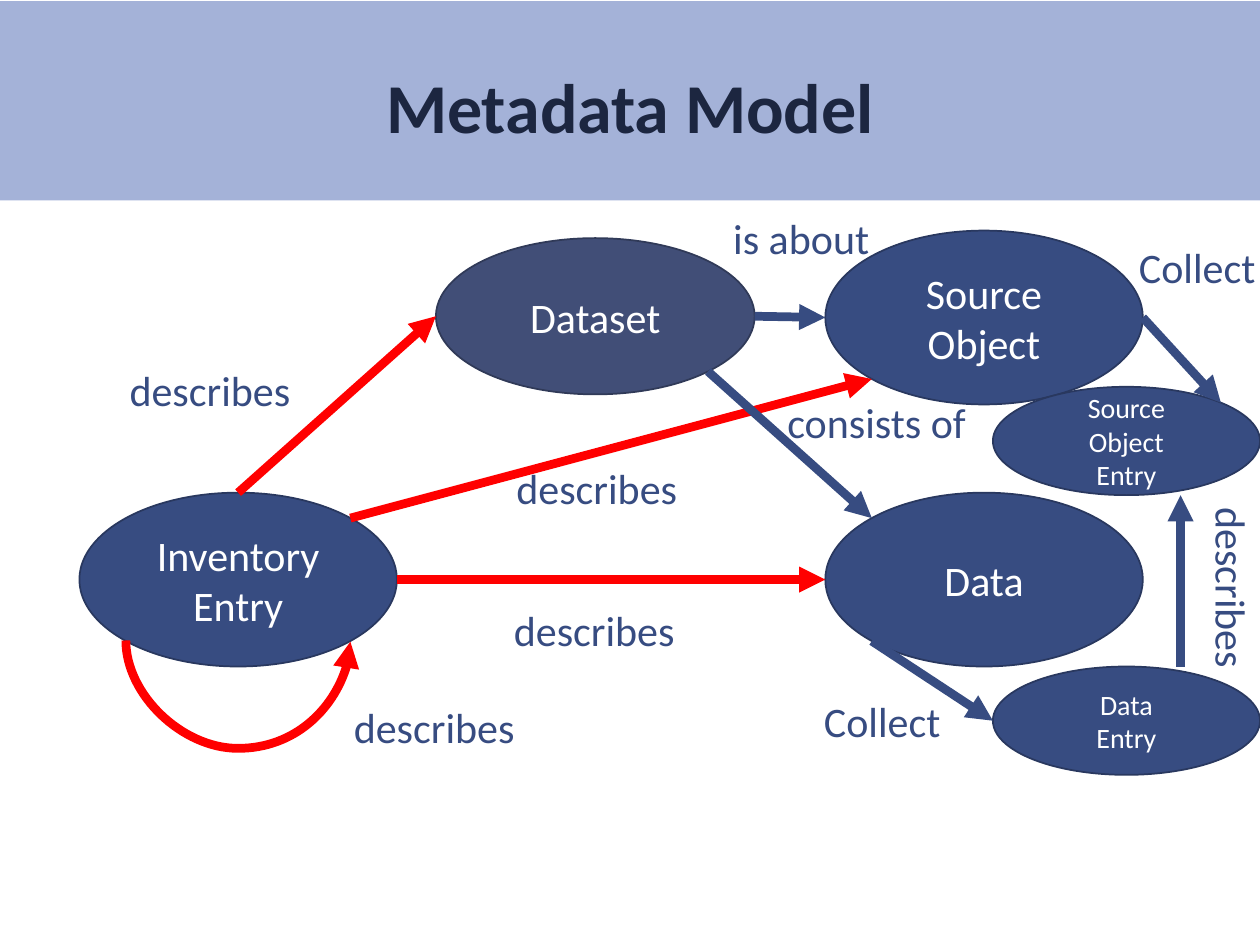
from math import cos, radians, sin

from lxml import etree
from pptx import Presentation
from pptx.dml.color import RGBColor
from pptx.enum.shapes import MSO_CONNECTOR, MSO_SHAPE
from pptx.enum.text import MSO_ANCHOR, PP_ALIGN
from pptx.oxml.ns import qn
from pptx.util import Inches, Pt

LINE, CURVE = MSO_CONNECTOR.STRAIGHT, MSO_CONNECTOR.CURVE
OVAL = MSO_SHAPE.OVAL
LEFT, CENTER = PP_ALIGN.LEFT, PP_ALIGN.CENTER
MIDDLE, TOP = MSO_ANCHOR.MIDDLE, MSO_ANCHOR.TOP

COLS, ROWS = 100, 75
WIDE, HIGH = Inches(10), Inches(7.5)
COLORS = {
    "band": "A4B2D8", "title": "1C2640", "white": "FFFFFF",
    "blue": "374C81", "edge": "29385F",
    "slate": "414E77", "rim": "303A58", "red": "FF0000",
}
# Angles of the points where arrows meet an oval, clockwise from the right
SITES = {"right": 0, "low right": 45, "low left": 135, "left": 180,
         "top": 270, "high right": 315}


def color(name):
    return RGBColor.from_string(COLORS[name])


def write(frame, text, size=24, ink="blue", bold=False, align=LEFT, anchor=TOP):
    """Fill a text frame with one paragraph; newlines become line breaks."""
    frame.word_wrap = True
    frame.vertical_anchor = anchor
    para = frame.paragraphs[0]
    para.alignment = align
    for i, line in enumerate(text.split("\n")):
        if i:
            para.add_line_break()
        run = para.add_run()
        run.text = line
        font = run.font
        font.name, font.size, font.bold = "Calibri", Pt(size), bold
        font.color.rgb = color(ink)


def site(oval, name):
    """Point on an oval's edge, in columns and rows."""
    x, y, w, h = oval
    turn = radians(SITES[name])
    return x + w / 2 * (1 + cos(turn)), y + h / 2 * (1 + sin(turn))


class Sketch:
    """Holds the slide and draws on a grid of 100 columns by 75 rows."""

    def __init__(self, deck):
        self.slide = deck.slides.add_slide(deck.slide_layouts[5])
        self.shapes = self.slide.shapes

    def grid(self, *spots):
        """Turn alternating columns and rows into slide lengths."""
        units = (WIDE / COLS, HIGH / ROWS)
        return [round(n * units[i % 2]) for i, n in enumerate(spots)]

    def title(self, text, *box):
        band = self.shapes.title
        band.left, band.top, band.width, band.height = self.grid(*box)
        band.fill.solid()
        band.fill.fore_color.rgb = color("band")
        frame = band.text_frame
        frame.margin_left = frame.margin_right = frame.margin_bottom = 0
        frame.margin_top = Inches(0.08)
        write(frame, text, size=40, ink="title", bold=True,
              align=CENTER, anchor=MIDDLE)

    def oval(self, text, box, size=24, fill="blue", edge="edge"):
        shape = self.shapes.add_shape(OVAL, *self.grid(*box))
        shape.shadow.inherit = False
        shape.fill.solid()
        shape.fill.fore_color.rgb = color(fill)
        shape.line.color.rgb = color(edge)
        shape.line.width = Pt(1)
        write(shape.text_frame, text, size=size, ink="white",
              align=CENTER, anchor=MIDDLE)

    def label(self, text, x, y, w=17.5, h=5, down=False):
        box = self.shapes.add_textbox(*self.grid(x, y, w, h))
        write(box.text_frame, text)
        if down:
            box.text_frame._txBody.bodyPr.set("vert", "vert")

    def arrow(self, start, end, ink="blue", kind=LINE):
        link = self.shapes.add_connector(kind, *self.grid(*start, *end))
        link.line.color.rgb = color(ink)
        link.line.width = Pt(5)
        etree.SubElement(link.line._get_or_add_ln(), qn("a:tailEnd"),
                         type="triangle")
        etree.SubElement(link._element.spPr, qn("a:effectLst"))
        return link

    def loop(self, oval, drop, ink):
        """Curved arrow hanging below an oval, from its left to its right."""
        (x1, y), (x2, _) = site(oval, "low left"), site(oval, "low right")
        mid, half, thin = (x1 + x2) / 2, (x2 - x1) / 2, 0.1
        link = self.arrow((mid - thin / 2, y - half),
                          (mid + thin / 2, y + half), ink, CURVE)
        props = link._element.spPr
        frame = props.find(qn("a:xfrm"))
        frame.set("rot", str(270 * 60000))
        frame.set("flipH", "1")
        bends = props.find(qn("a:prstGeom")).find(qn("a:avLst"))
        etree.SubElement(bends, qn("a:gd"), name="adj1",
                         fmla=f"val {round(drop / thin * 100000)}")


def main():
    deck = Presentation()
    deck.slide_width, deck.slide_height = WIDE, HIGH
    sketch = Sketch(deck)
    sketch.title("Metadata Model", 0, 0.1, 100, 15.8)

    big, small = (25.2, 13.8), (21.2, 8.6)
    stock = (6.3, 39.1, *big)
    dataset = (34.6, 18.9, 25.3, 12.4)
    source = (65.5, 18.3, *big)
    data = (65.5, 39.1, *big)
    sentry = (78.8, 30.7, *small)
    dentry = (78.8, 52.9, *small)

    sketch.oval("Inventory Entry", stock)
    sketch.oval("Dataset", dataset, fill="slate", edge="rim")
    sketch.oval("Source\nObject", source)
    sketch.oval("Data", data)
    sketch.oval("Source\nObject\nEntry", sentry, size=16)
    sketch.oval("Data\nEntry", dentry, size=16)

    for begin, out, end, into, ink in (
        (stock, "top", dataset, "left", "red"),
        (stock, "high right", source, "low left", "red"),
        (stock, "right", data, "left", "red"),
        (dataset, "right", source, "left", "blue"),
        (dataset, "low right", data, "high left", "blue"),
        (source, "right", sentry, "high right", "blue"),
        (data, "low left", dentry, "left", "blue"),
    ):
        sketch.arrow(site(begin, out), site(end, into), ink)
    sketch.arrow((93.7, dentry[1]), (93.7, sentry[1] + sentry[3]))
    sketch.loop(stock, 8.7, "red")

    for text, x, y in (
        ("describes", 9.3, 28.4), ("describes", 40, 36.2),
        ("describes", 39.8, 47.5), ("describes", 27.1, 55.2),
        ("Collect", 64.4, 54.7), ("Collect", 89.4, 18.7),
        ("is about", 57.2, 16.4), ("consists of", 61.5, 31),
    ):
        sketch.label(text, x, y)
    sketch.label("describes", 94.2, 39.3, 6.1, 19.7, down=True)

    deck.save("out.pptx")


SITES["high left"] = 225

if __name__ == "__main__":
    main()
